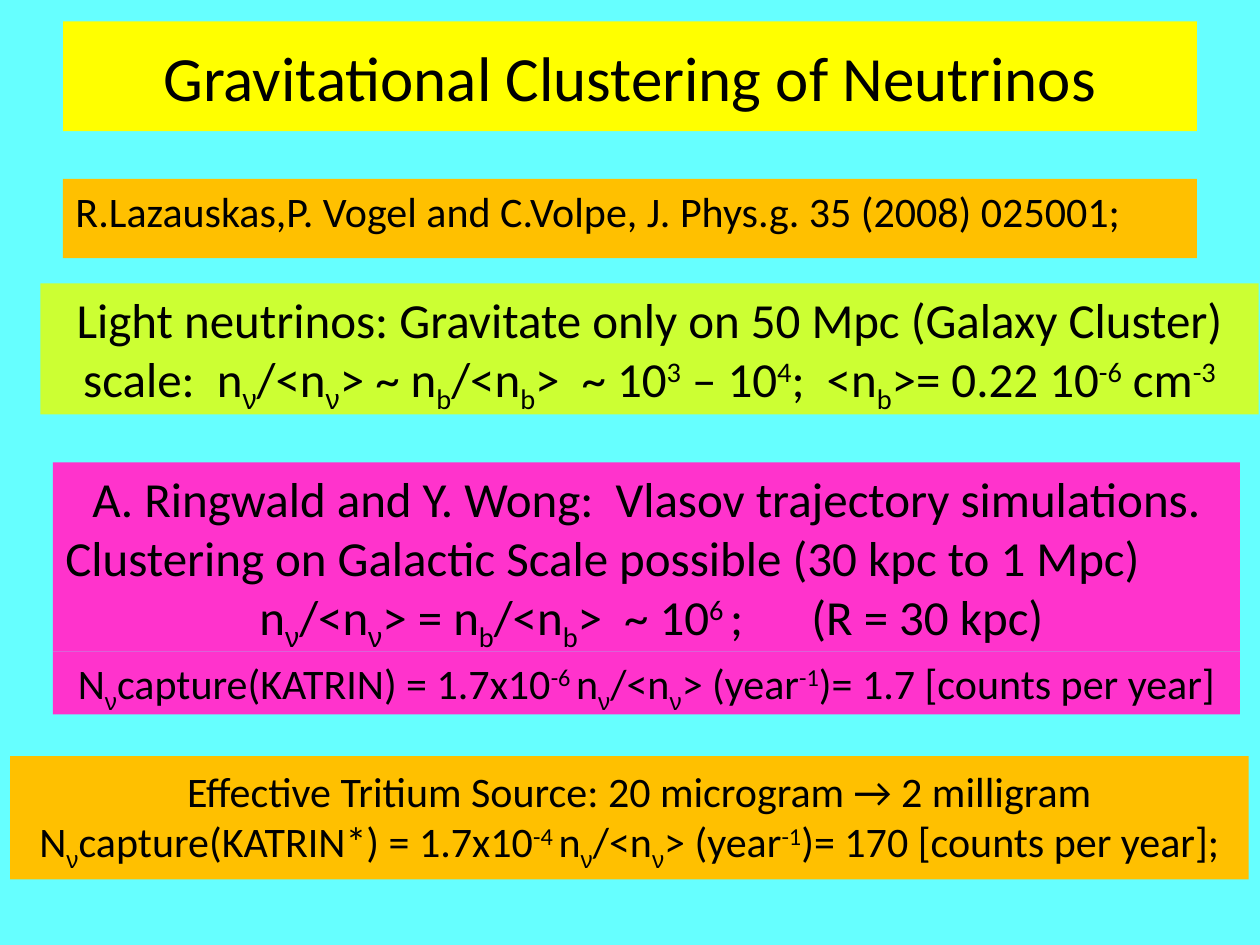
from pptx import Presentation
from pptx.dml.color import RGBColor
from pptx.enum.shapes import MSO_SHAPE as Shape
from pptx.enum.text import MSO_ANCHOR as Anchor, PP_ALIGN as Align
from pptx.oxml.ns import qn
from pptx.util import Inches, Pt
from lxml.etree import SubElement

CYAN = RGBColor(0x66, 0xFF, 0xFF)
YELLOW = RGBColor(0xFF, 0xFF, 0x00)
ORANGE = RGBColor(0xFF, 0xC0, 0x00)
LIME = RGBColor(0xCC, 0xFF, 0x33)
PINK = RGBColor(0xFF, 0x33, 0xCC)
BLACK = RGBColor(0, 0, 0)

CELL = Inches(0.1)  # the slide is a grid of 100 columns by 75 rows
BASELINES = {"_": -25000, "^": 30000}

NEUTRINO_RATIO = "n{_ν}/<n{_ν}>"
BARYON_RATIO = "n{_b}/<n{_b}>"


def place(shape, box, color):
    """Put a shape on the grid box (column, row, columns, rows) and fill it."""
    for name, cells in zip(("left", "top", "width", "height"), box):
        setattr(shape, name, round(cells * CELL))
    shape.fill.solid()
    shape.fill.fore_color.rgb = color


def add_run(paragraph, text, size, baseline=None):
    run = paragraph.add_run()
    run.text = text
    font_format = {"name": "Arial" if text == "ν" else "Calibri", "size": Pt(size)}
    for name, value in font_format.items():
        setattr(run.font, name, value)
    run.font.color.rgb = BLACK
    if baseline:
        run._r.get_or_add_rPr().set("baseline", str(baseline))


def write_formula(paragraph, text, size):
    """Write text in which {_x} is a subscript and {^x} a superscript."""
    first, *parts = text.split("{")
    if first:
        add_run(paragraph, first, size)
    for part in parts:
        script, _, rest = part.partition("}")
        add_run(paragraph, script[1:], size, BASELINES[script[0]])
        if rest:
            add_run(paragraph, rest, size)


def set_tabs(paragraph, *positions):
    tab_list = SubElement(paragraph._p.get_or_add_pPr(), qn("a:tabLst"))
    for position in positions:
        SubElement(tab_list, qn("a:tab"), pos=str(round(position * CELL)), algn="l")


def add_title(slide, box, text):
    title = slide.shapes.title
    place(title, box, YELLOW)
    title.text_frame.vertical_anchor = Anchor.MIDDLE
    paragraph = title.text_frame.paragraphs[0]
    paragraph.alignment = Align.CENTER
    add_run(paragraph, text, 36)


def add_panel(slide, box, color, lines, size, anchor=Anchor.TOP):
    """Add a filled panel with one paragraph for each (text, alignment)."""
    panel = slide.shapes.add_shape(Shape.RECTANGLE, 0, 0, CELL, CELL)
    place(panel, box, color)
    panel.line.fill.background()
    panel.shadow.inherit = False
    frame = panel.text_frame
    for name, value in {"word_wrap": True, "vertical_anchor": anchor}.items():
        setattr(frame, name, value)
    for index, (text, alignment) in enumerate(lines):
        paragraph = frame.add_paragraph() if index else frame.paragraphs[0]
        paragraph.alignment = alignment
        write_formula(paragraph, text, size)
    return frame.paragraphs


def add_clustering(slide, box):
    """Stack the simulation result on its capture rate in one pink block."""
    left, top, width, height = box
    rate_height = 5
    simulation_height = height - rate_height
    lines = add_panel(slide, (left, top, width, simulation_height), PINK, [
        ("A. Ringwald and Y. Wong:  Vlasov trajectory simulations.", Align.CENTER),
        ("Clustering on Galactic Scale possible (30 kpc to 1 Mpc)", Align.LEFT),
        (f"\t{NEUTRINO_RATIO} = {BARYON_RATIO}  ~ 10{{^6 }};\t(R = 30 kpc)", Align.LEFT),
    ], 28)
    set_tabs(lines[-1], 15.4, 59.2)
    add_panel(slide, (left, top + simulation_height, width, rate_height), PINK,
              [(capture_rate("KATRIN", -6, "1.7 [counts per year]"), Align.CENTER)], 24)


def capture_rate(source, exponent, result):
    return (f"N{{_ν}}capture({source}) = 1.7x10{{^{exponent} }}"
            f"{NEUTRINO_RATIO} (year{{^-1}})= {result}")


def main():
    presentation = Presentation()
    presentation.slide_width, presentation.slide_height = 100 * CELL, 75 * CELL
    slide = presentation.slides.add_slide(presentation.slide_layouts[5])
    slide.background.fill.solid()
    slide.background.fill.fore_color.rgb = CYAN

    add_title(slide, (5, 1.7, 90, 8.7), "Gravitational Clustering of Neutrinos")
    add_panel(slide, (5, 14.2, 90, 6.3), ORANGE, [
        ("R.Lazauskas,P. Vogel and C.Volpe, J. Phys.g. 35 (2008) 025001;", Align.LEFT),
    ], 24)
    add_panel(slide, (3.2, 22.5, 96.7, 10.4), LIME, [
        ("Light neutrinos: Gravitate only on 50 Mpc (Galaxy Cluster) scale:  "
         f"{NEUTRINO_RATIO} ~ {BARYON_RATIO}  ~ 10{{^3}} – 10{{^4}};  "
         "<n{_b}>= 0.22 10{^-6} cm{^-3}", Align.CENTER),
    ], 28)
    add_clustering(slide, (4.2, 36.7, 94.2, 20))
    source_lines = add_panel(slide, (0.8, 60, 98.3, 9.8), ORANGE, [
        ("Effective Tritium Source: 20 microgram → 2 milligram", Align.CENTER),
        (capture_rate("KATRIN*", -4, "170 [counts per year];"), Align.CENTER),
    ], 24, Anchor.BOTTOM)
    source_lines[0]._p.get_or_add_pPr().set("marL", str(round(1.6 * CELL)))

    presentation.save("out.pptx")


if __name__ == "__main__":
    main()
